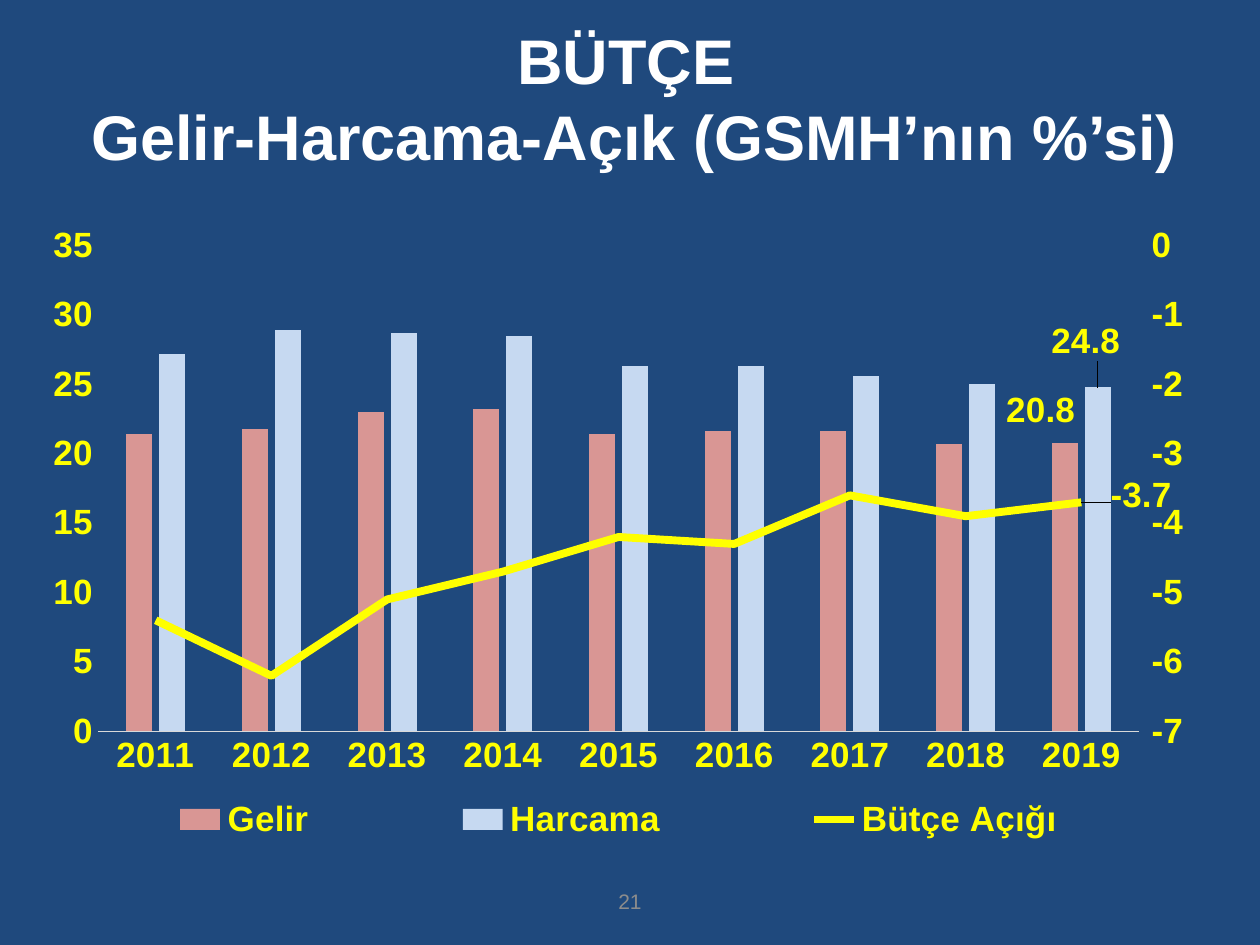
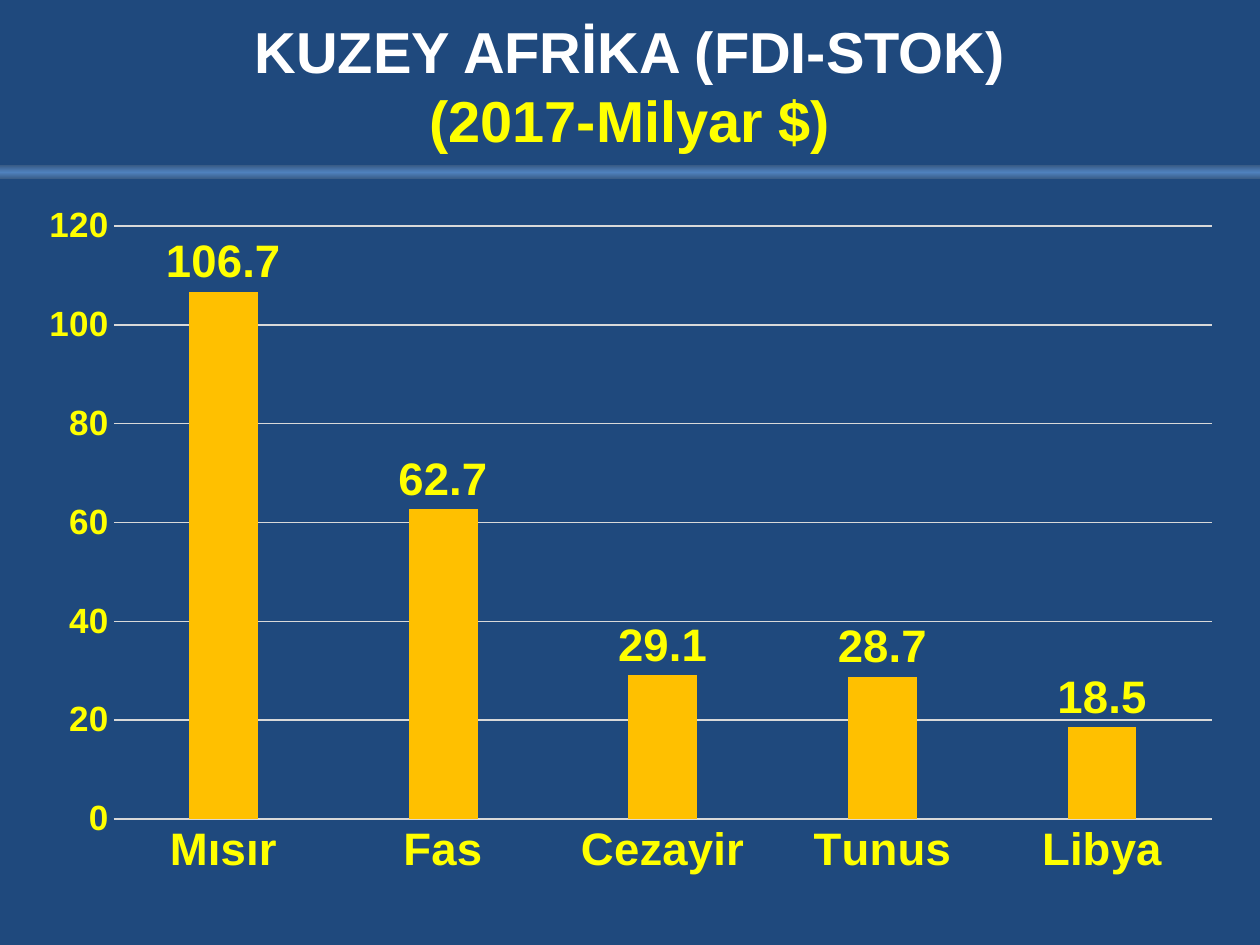
from pptx import Presentation
from pptx.chart.data import CategoryChartData
from pptx.dml.color import RGBColor
from pptx.enum.chart import XL_CHART_TYPE, XL_LABEL_POSITION, XL_LEGEND_POSITION, XL_MARKER_STYLE, XL_TICK_MARK
from pptx.enum.shapes import MSO_SHAPE
from pptx.enum.text import MSO_ANCHOR, PP_ALIGN
from pptx.oxml import parse_xml
from pptx.oxml.ns import nsdecls, qn
from pptx.util import Pt

HUES = {
    "navy": "1F497D", "white": "FFFFFF", "yellow": "FFFF00", "gray": "8C8C8C",
    "rule": "D9D9D9", "rose": "D99694", "sky": "C6D9F1", "gold": "FFC000",
    "edge": "395C87", "glow": "4F81BD",
}
FACE = "Arial"


def hue(name):
    """Return the named colour."""
    return RGBColor.from_string(HUES[name])


def put(item, **vals):
    """Set several attributes on one object."""
    for key, val in vals.items():
        setattr(item, key, val)


def style(font, size, color, bold=True):
    """Give a font the deck's face with a size and colour."""
    put(font, name=FACE, size=Pt(size), bold=bold)
    font.color.rgb = hue(color)


def page(deck):
    """Add a blank slide on the navy ground."""
    slide = deck.slides.add_slide(deck.slide_layouts[6])
    slide.background.fill.solid()
    slide.background.fill.fore_color.rgb = hue("navy")
    return slide


def words(slide, box, lines, size, bold=True):
    """Write centred lines, each a text and a colour, in a box."""
    frame = slide.shapes.add_textbox(*map(Pt, box)).text_frame
    put(frame, word_wrap=True, vertical_anchor=MSO_ANCHOR.MIDDLE)
    for i, (text, color) in enumerate(lines):
        para = frame.add_paragraph() if i else frame.paragraphs[0]
        para.alignment = PP_ALIGN.CENTER
        run = para.add_run()
        run.text = text
        style(run.font, size, color, bold)


def band(slide, box):
    """Draw the glowing band under the title."""
    shape = slide.shapes.add_shape(MSO_SHAPE.RECTANGLE, *map(Pt, box))
    shape.shadow.inherit = False
    stops = "".join(
        f'<a:gs pos="{pos}"><a:srgbClr val="{HUES[name]}"/></a:gs>'
        for pos, name in ((0, "edge"), (50000, "glow"), (100000, "edge")))
    shape._element.spPr.insert(2, parse_xml(
        f'<a:gradFill {nsdecls("a")}><a:gsLst>{stops}</a:gsLst>'
        '<a:lin ang="5400000" scaled="0"/></a:gradFill>'))
    shape.line.fill.background()


def columns(slide, box, names, rows, colors):
    """Add a clustered column chart in the deck's style."""
    data = CategoryChartData()
    data.categories = names
    for name, vals in rows:
        data.add_series(name, vals)
    chart = slide.shapes.add_chart(
        XL_CHART_TYPE.COLUMN_CLUSTERED, *map(Pt, box), data).chart
    put(chart, has_title=False, has_legend=False)
    style(chart.font, 20, "yellow")
    plot = chart.plots[0]
    put(plot, gap_width=219, overlap=-27, vary_by_categories=False)
    for row, color in zip(plot.series, colors):
        row.format.fill.solid()
        row.format.fill.fore_color.rgb = hue(color)
    for axis in (chart.category_axis, chart.value_axis):
        put(axis, major_tick_mark=XL_TICK_MARK.NONE, minor_tick_mark=XL_TICK_MARK.NONE)
    chart.value_axis.format.line.fill.background()
    rule(chart.category_axis.format.line)
    return chart


def rule(line):
    """Make a thin light line."""
    line.color.rgb = hue("rule")
    line.width = Pt(0.75)


def clear(host, tag):
    """Remove the children with this tag."""
    for old in host.findall(qn(tag)):
        host.remove(old)


def place(host, index, head="", **spots):
    """Give a chart part a manual layout."""
    clear(host, "c:layout")
    parts = "".join(f'<c:{key} val="{val}"/>' for key, val in spots.items())
    host.insert(index, parse_xml(
        f'<c:layout {nsdecls("c")}><c:manualLayout>{head}{parts}</c:manualLayout></c:layout>'))


def lift(chart, low, high):
    """Move the last series to a line on a right-hand axis."""
    bars = chart.plots[0]._element
    row = bars.findall(qn("c:ser"))[-1]
    clear(row, "c:invertIfNegative")
    line = parse_xml(
        f'<c:lineChart {nsdecls("c")}><c:grouping val="standard"/><c:varyColors val="0"/>'
        '<c:marker val="1"/><c:axId val="501"/><c:axId val="502"/></c:lineChart>')
    line.insert(2, row)
    bars.addnext(line)
    right = parse_xml(
        f'<c:valAx {nsdecls("c", "a")}><c:axId val="502"/><c:scaling>'
        f'<c:orientation val="minMax"/><c:max val="{high}"/><c:min val="{low}"/></c:scaling>'
        '<c:delete val="0"/><c:axPos val="r"/><c:numFmt formatCode="0" sourceLinked="0"/>'
        '<c:majorTickMark val="out"/><c:minorTickMark val="none"/><c:tickLblPos val="nextTo"/>'
        '<c:spPr><a:ln><a:noFill/></a:ln></c:spPr><c:crossAx val="501"/>'
        '<c:crosses val="max"/><c:majorUnit val="1"/></c:valAx>')
    base = parse_xml(
        f'<c:catAx {nsdecls("c")}><c:axId val="501"/><c:scaling>'
        '<c:orientation val="minMax"/></c:scaling><c:delete val="1"/><c:axPos val="b"/>'
        '<c:crossAx val="502"/><c:crosses val="autoZero"/></c:catAx>')
    last = chart.value_axis._element
    last.addnext(right)
    right.addnext(base)
    trend = chart.plots[1].series[0]
    trend.smooth = False
    trend.marker.style = XL_MARKER_STYLE.NONE
    trend.format.line.color.rgb = hue("yellow")
    trend.format.line.width = Pt(4.5)
    return trend


def mark(row, index, spot, x, y):
    """Label one point, shifted from its usual spot."""
    label = row.points[index].data_label
    label.position = spot
    row.data_labels.show_value = False
    place(row._element.find(".//" + qn("c:dLbl")), 1, x=x, y=y)


def budget(slide, box):
    """Chart revenue and spending as columns and the deficit as a line."""
    rows = (
        ("Gelir", (21.4, 21.8, 23.0, 23.2, 21.4, 21.6, 21.6, 20.7, 20.8)),
        ("Harcama", (27.2, 28.9, 28.7, 28.5, 26.3, 26.3, 25.6, 25.0, 24.8)),
        ("Bütçe Açığı", (-5.4, -6.2, -5.1, -4.7, -4.2, -4.3, -3.6, -3.9, -3.7)),
    )
    years = [str(year) for year in range(2011, 2020)]
    chart = columns(slide, box, years, rows, ("rose", "sky"))
    axis = chart.value_axis
    put(axis, has_major_gridlines=False, minimum_scale=0, maximum_scale=35, major_unit=5)
    put(axis.tick_labels, number_format="0", number_format_is_linked=False)
    trend = lift(chart, -7, 0)
    income, spend = chart.plots[0].series
    mark(income, 8, XL_LABEL_POSITION.OUTSIDE_END, -0.02, -0.01)
    mark(spend, 8, XL_LABEL_POSITION.OUTSIDE_END, -0.01, -0.03)
    mark(trend, 8, XL_LABEL_POSITION.RIGHT, 0.02, -0.01)
    chart.has_legend = True
    put(chart.legend, position=XL_LEGEND_POSITION.BOTTOM, include_in_layout=False)
    modes = '<c:xMode val="edge"/><c:yMode val="edge"/>'
    place(chart.legend._element, 1, modes, x=0.01, y=0.88, w=0.96, h=0.09)
    place(chart.plots[0]._element.getparent(), 0, '<c:layoutTarget val="inner"/>' + modes,
          x=0.06, y=0.11, w=0.86, h=0.69)


def stock(slide, box):
    """Chart the investment stock of each country."""
    lands = ("Mısır", "Fas", "Cezayir", "Tunus", "Libya")
    rows = [("Series 1", (106.7, 62.7, 29.1, 28.7, 18.5))]
    chart = columns(slide, box, lands, rows, ["gold"])
    rule(chart.value_axis.major_gridlines.format.line)
    style(chart.category_axis.tick_labels.font, 26, "yellow")
    tags = chart.plots[0].series[0].data_labels
    put(tags, show_value=True, position=XL_LABEL_POSITION.OUTSIDE_END)
    style(tags.font, 26, "yellow")


def main():
    """Build both slides and save the deck."""
    deck = Presentation()
    put(deck, slide_width=Pt(720), slide_height=Pt(540))
    slide = page(deck)
    words(slide, (246, 500.5, 228, 28.5), [("21", "gray")], 12, False)
    budget(slide, (14.4, 96, 692, 402.5))
    words(slide, (8.6, 15, 698, 81),
          [("BÜTÇE", "white"), (" Gelir-Harcama-Açık (GSMH’nın %’si)", "white")], 36)
    slide = page(deck)
    words(slide, (36, 3.6, 648, 90),
          [("KUZEY AFRİKA (FDI-STOK)", "white"), ("(2017-Milyar $)", "yellow")], 33)
    band(slide, (0, 94.5, 720, 8))
    stock(slide, (14.4, 110, 692, 398))
    deck.save("out.pptx")


if __name__ == "__main__":
    main()
